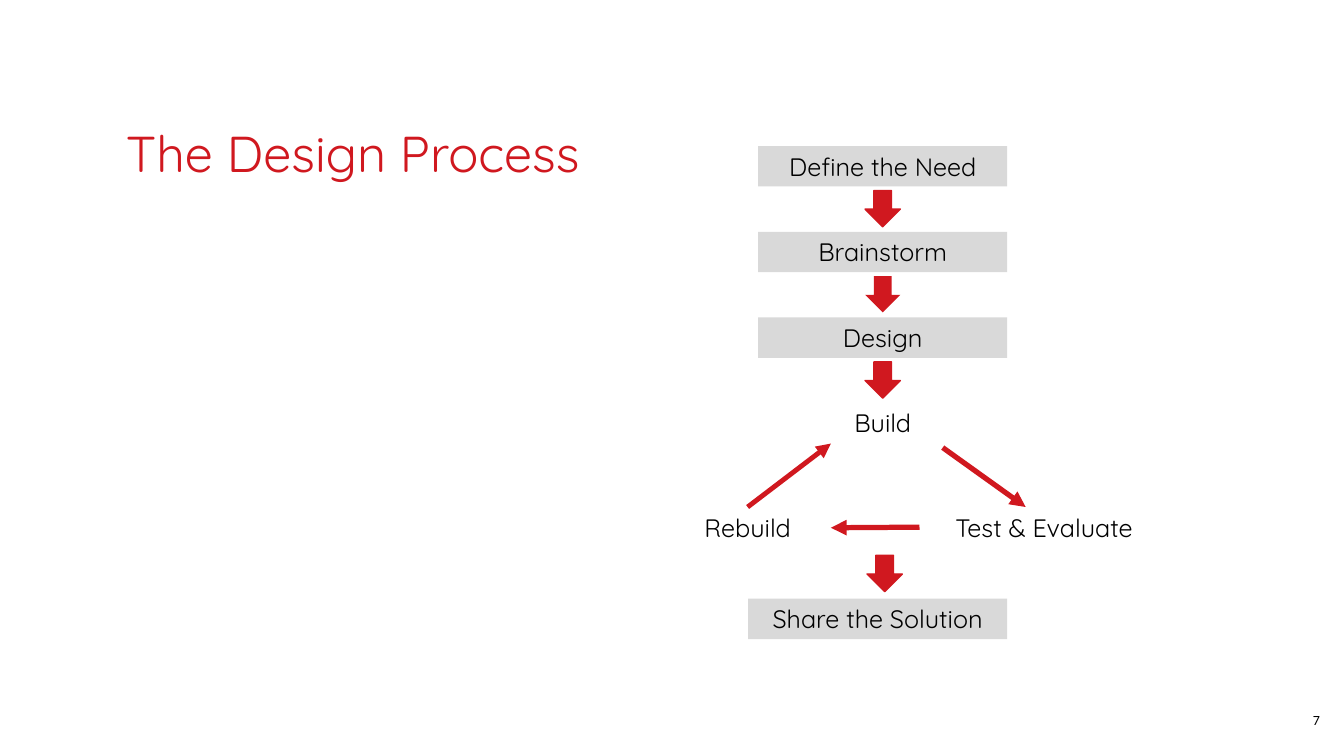
from collections import namedtuple

from lxml.etree import SubElement
from pptx import Presentation
from pptx.dml.color import RGBColor
from pptx.enum.shapes import MSO_CONNECTOR, MSO_SHAPE
from pptx.enum.text import MSO_ANCHOR, PP_ALIGN
from pptx.oxml.ns import qn
from pptx.util import Inches, Pt

COLORS = {"accent": "D0181F", "step": "D9D9D9", "text": "000000"}
STEP_HEIGHT = 0.4
STEP_PITCH = 0.85
ARROW_WIDTH, ARROW_HEIGHT = 0.35, 0.36
TOP, LEFT = 0, 1  # connection sites

Box = namedtuple("Box", "left top width height")


def color(name):
    return RGBColor.from_string(COLORS[name])


def emu(box):
    return [Inches(length) for length in box]


def point(box, across, down):
    """Return the place at the given shares of the box."""
    return box.left + across * box.width, box.top + down * box.height


def write(shape, text, size, align, font="Quicksand", ink="text", anchor=MSO_ANCHOR.TOP):
    frame = shape.text_frame
    frame.word_wrap = True
    frame.vertical_anchor = anchor
    paragraph = frame.paragraphs[0]
    paragraph.alignment = align
    run = paragraph.add_run()
    run.text = text
    run.font.size = Pt(size)
    run.font.name = font
    run.font.color.rgb = color(ink)
    return paragraph


def add_filled(slide, preset, box, fill):
    shape = slide.shapes.add_shape(preset, *emu(box))
    shape.shadow.inherit = False
    shape.fill.solid()
    shape.fill.fore_color.rgb = color(fill)
    shape.line.fill.background()
    return shape


def add_step(slide, box, text):
    step = add_filled(slide, MSO_SHAPE.RECTANGLE, box, "step")
    write(step, text, 18, PP_ALIGN.CENTER)


def add_label(slide, box, text):
    label = slide.shapes.add_textbox(*emu(box))
    write(label, text, 18, PP_ALIGN.CENTER)
    return label


def add_down_arrow(slide, center, top, outlined=True):
    box = Box(center - ARROW_WIDTH / 2, top, ARROW_WIDTH, ARROW_HEIGHT)
    arrow = add_filled(slide, MSO_SHAPE.DOWN_ARROW, box, "accent")
    if outlined:
        arrow.line.color.rgb = color("accent")
        arrow.line.width = Pt(1)


def add_cycle_arrow(slide, start, end, width):
    arrow = slide.shapes.add_connector(MSO_CONNECTOR.STRAIGHT, *emu(start + end))
    arrow.line.color.rgb = color("accent")
    arrow.line.width = Pt(width)
    SubElement(arrow.line._get_or_add_ln(), qn("a:tailEnd"), type="triangle")
    SubElement(arrow._element.spPr, qn("a:effectLst"))
    return arrow


def add_title(slide, box):
    title = slide.shapes.add_textbox(*emu(box))
    paragraph = write(title, "The Design Process", 36, PP_ALIGN.LEFT,
                      ink="accent", anchor=MSO_ANCHOR.MIDDLE)
    paragraph.line_spacing = 0.9


def add_opening_steps(slide, box):
    center = box.left + box.width / 2
    for row, text in enumerate(("Define the Need", "Brainstorm", "Design")):
        top = box.top + row * STEP_PITCH
        add_step(slide, Box(box.left, top, box.width, STEP_HEIGHT), text)
        add_down_arrow(slide, center, top + 0.44, outlined=row != 1)


def add_build_cycle(slide, box):
    """Place Build at the top and the other two stages in the lower corners."""
    label_width = 2.47
    right = box.left + box.width - label_width
    bottom = box.top + box.height - STEP_HEIGHT
    places = {
        "Build": (box.left + 1.34, box.top),
        "Test & Evaluate": (right, bottom),
        "Rebuild": (box.left, bottom),
    }
    labels = {text: add_label(slide, Box(*place, label_width, STEP_HEIGHT), text)
              for text, place in places.items()}

    add_cycle_arrow(slide, point(box, 0.586, 0.313), point(box, 0.738, 0.722), 3.75)
    to_rebuild = add_cycle_arrow(slide, point(box, 0.543, 0.865),
                                 point(box, 0.381, 0.865), 3.75)
    to_rebuild.begin_connect(labels["Test & Evaluate"], LEFT)
    to_build = add_cycle_arrow(slide, point(box, 0.229, 0.722),
                               point(box, 0.381, 0.285), 3.5)
    to_build.begin_connect(labels["Rebuild"], TOP)


def add_final_step(slide, box):
    add_down_arrow(slide, box.left + 0.527 * box.width, box.top)
    step_top = box.top + box.height - STEP_HEIGHT
    add_step(slide, Box(box.left, step_top, box.width, STEP_HEIGHT), "Share the Solution")


def add_page_number(slide, box):
    number = slide.shapes.add_textbox(*emu(box))
    write(number, "7", 10, PP_ALIGN.RIGHT, font="Calibri")


def main():
    deck = Presentation()
    deck.slide_width, deck.slide_height = Inches(13.33), Inches(7.5)
    slide = deck.slides.add_slide(deck.slide_layouts[6])
    add_page_number(slide, Box(11.73, 7.01, 1.46, 0.27))
    add_opening_steps(slide, Box(7.52, 1.45, 2.47, 2.5))
    add_build_cycle(slide, Box(6.18, 3.99, 5.41, 1.44))
    add_final_step(slide, Box(7.42, 5.51, 2.57, 0.83))
    add_title(slide, Box(1.15, 1.05, 11.08, 1))
    deck.save("out.pptx")


if __name__ == "__main__":
    main()
